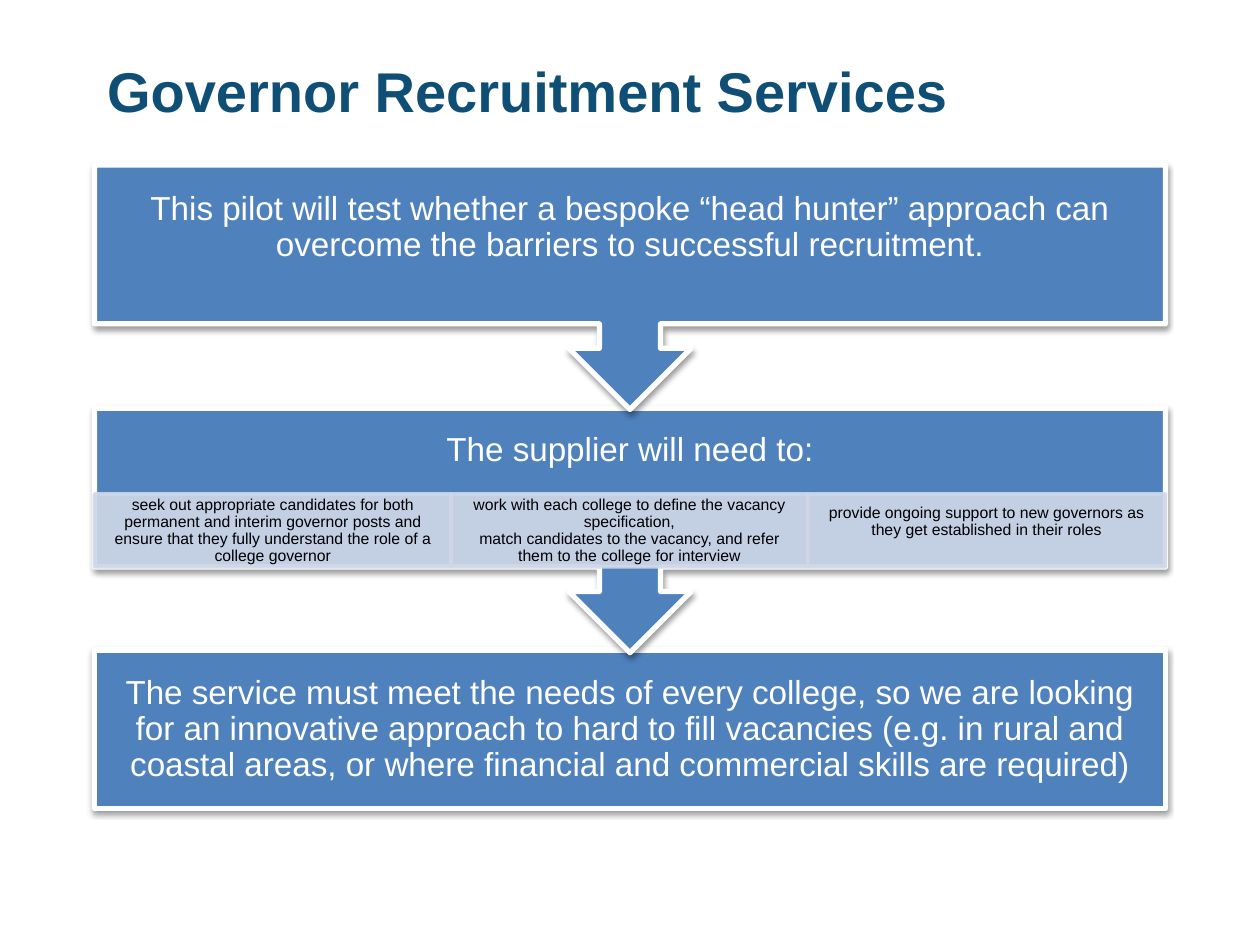
from lxml import etree
from pptx import Presentation
from pptx import util as u
from pptx.dml.color import RGBColor
from pptx.enum import shapes, text
from pptx.oxml import ns, parse_xml

PX = 9144  # 100 px to the inch
BLUE = RGBColor(0x4F, 0x81, 0xBD)
PALE = RGBColor(0xD0, 0xD8, 0xE8)
NAVY = RGBColor(0x10, 0x4F, 0x75)
WHITE = RGBColor(0xFF, 0xFF, 0xFF)
BLACK = RGBColor(0, 0, 0)
SHADOW = (
    f'<a:effectLst {ns.nsdecls("a")}>'
    '<a:outerShdw blurRad="40000" dist="20000" dir="5400000" rotWithShape="0">'
    '<a:srgbClr val="000000"><a:alpha val="38000"/></a:srgbClr>'
    '</a:outerShdw></a:effectLst>'
)


def put(shape, words, size=19, color=WHITE, bold=False, space=0.9,
        align=text.PP_ALIGN.CENTER, pads=(15, 15, 15, 15)):
    """Write words in a shape; pads are left, top, right, bottom in px."""
    frame = shape.text_frame
    frame.word_wrap = True
    frame.vertical_anchor = text.MSO_ANCHOR.MIDDLE
    frame.margin_left, frame.margin_top, frame.margin_right, frame.margin_bottom = [
        pad * PX for pad in pads]
    para = frame.paragraphs[0]
    para.text = words
    para.alignment = align
    para.line_spacing = space
    for run in para.runs:
        font = run.font
        font.name, font.size, font.bold = "Arial", u.Pt(size), bold
        font.color.rgb = color


def block(kind, x, y, w, h, fill, edge, width):
    shape = slide.shapes.add_shape(kind, x * PX, y * PX, w * PX, h * PX)
    shape.shadow.inherit = False
    shape.fill.solid()
    shape.fill.fore_color.rgb = fill
    shape.line.color.rgb = edge
    shape.line.width = u.Pt(width)
    return shape


deck = Presentation()
deck.slide_width, deck.slide_height = 1000 * PX, 750 * PX
slide = deck.slides.add_slide(deck.slide_layouts[5])

title = slide.shapes.title
title.left, title.top, title.width, title.height = [v * PX for v in (75, 36, 850, 71)]
put(title, "Governor Recruitment Services", size=32, color=NAVY, bold=True,
    space=1.0, align=text.PP_ALIGN.LEFT, pads=(10, 5, 10, 5))

# Steps run from the bottom up, so that each arrow tip lies over the next box
CALL = shapes.MSO_SHAPE.DOWN_ARROW_CALLOUT
RECT = shapes.MSO_SHAPE.RECTANGLE
steps = [
    (RECT, 516, 126, 15,
     "The service must meet the needs of every college, so we are looking for "
     "an innovative approach to hard to fill vacancies (e.g. in rural and "
     "coastal areas, or where financial and commercial skills are required)"),
    (CALL, 324, 194, 73, "The supplier will need to:"),
    (CALL, 131, 194, 42,
     "This pilot will test whether a bespoke “head hunter” approach can "
     "overcome the barriers to successful recruitment."),
]
for kind, top, high, foot, words in steps:
    step = block(kind, 75, top, 850, high, BLUE, WHITE, 3)
    props = step._element.spPr
    props.replace(props.find(ns.qn("a:effectLst")), parse_xml(SHADOW))
    put(step, words, pads=(15, 15, 15, foot))

tasks = [
    ("seek out appropriate candidates for both permanent and interim governor "
     "posts and ensure that they fully understand the role of a college governor", 1),
    ("work with each college to define the vacancy specification,\n"
     "match candidates to the vacancy, and refer them to the college for interview", 1),
    ("provide ongoing support to new governors "
     "as they get established in their roles", 14),
]
for i, (words, foot) in enumerate(tasks):
    left, right = 75 + 850 * i // 3, 75 + 850 * (i + 1) // 3
    cell = block(RECT, left, 392, right - left, 58, PALE, PALE, 2)
    for tint in cell._element.spPr.iter(ns.qn("a:srgbClr")):
        etree.SubElement(tint, ns.qn("a:alpha"), val="90000")
    put(cell, words, size=9, color=BLACK, pads=(7, 1, 7, foot))

deck.save("out.pptx")
